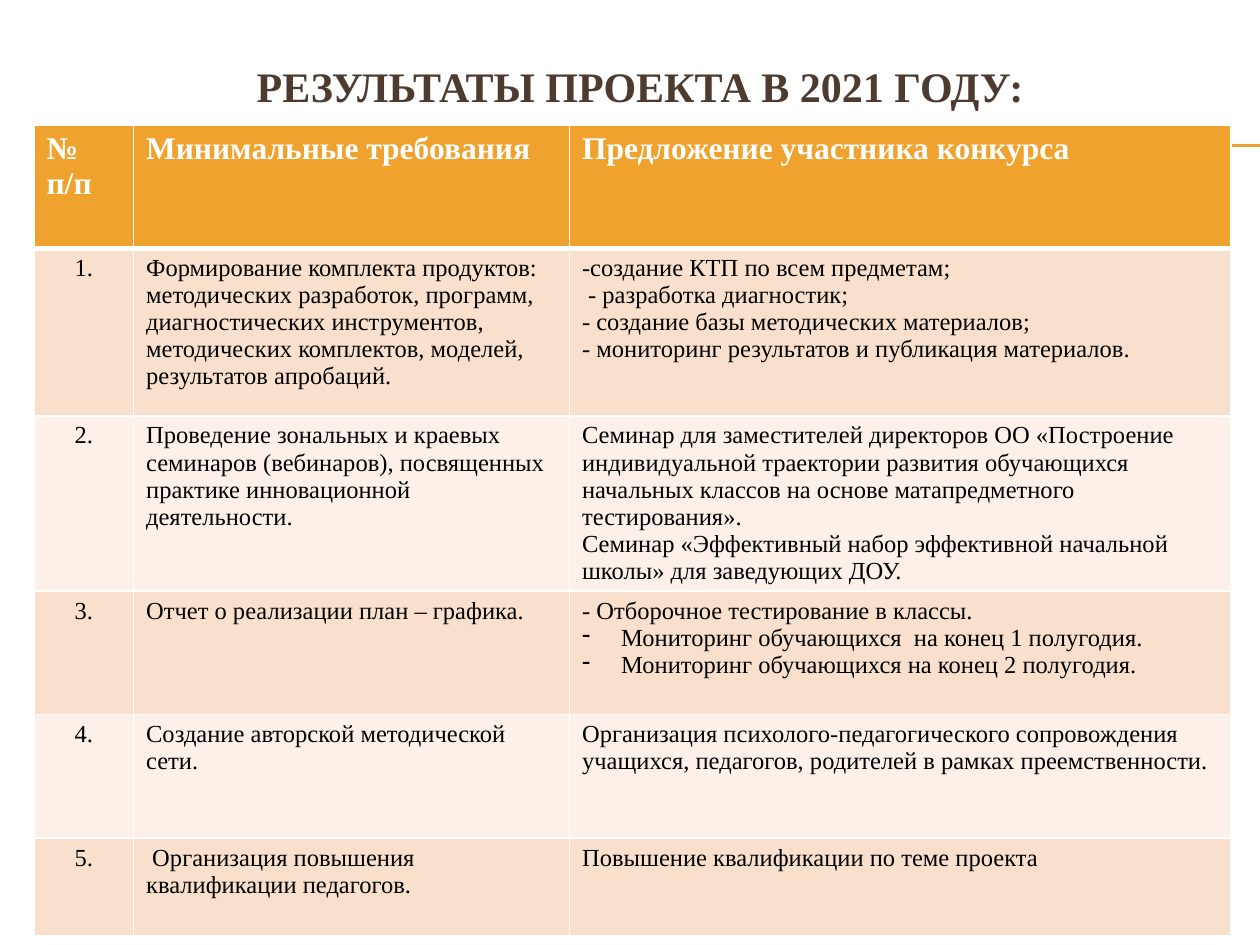
from dataclasses import dataclass

from lxml.etree import SubElement
from pptx import Presentation
from pptx.dml.color import RGBColor
from pptx.enum.shapes import MSO_CONNECTOR
from pptx.enum.text import MSO_ANCHOR, PP_ALIGN
from pptx.oxml import parse_xml
from pptx.oxml.ns import qn
from pptx.util import Inches, Pt

NS = "http://schemas.openxmlformats.org/drawingml/2006/main"


@dataclass(frozen=True)
class Theme:
    font: str = "Times New Roman"
    title: str = "4E3B30"
    accent: str = "F0A22E"
    bands: tuple[str, str] = ("F9E0CD", "FCF0E8")
    white: str = "FFFFFF"
    black: str = "000000"
    big: int = 24
    head: int = 18
    body: int = 14


@dataclass(frozen=True)
class Row:
    high: float
    need: str
    offer: tuple[str, ...]
    dashed: int = 0  # how many closing lines of the offer carry a dash bullet


THEME = Theme()
WIDE, HIGH = 10, 7.5
COLS = (0.79, 3.46, 5.25)
HEADS = ("№ п/п", "Минимальные требования", "Предложение участника конкурса")
HEAD_HIGH = 0.98
ROWS = (
    Row(1.33,
        "Формирование комплекта продуктов: методических разработок, программ, "
        "диагностических инструментов, методических комплектов, моделей, "
        "результатов апробаций.",
        ("-создание КТП по всем предметам;",
         " - разработка диагностик;",
         "- создание базы методических материалов;",
         "- мониторинг результатов и публикация материалов.")),
    Row(1.33,
        "Проведение зональных и краевых  семинаров (вебинаров), посвященных "
        "практике инновационной деятельности.",
        ("Семинар для заместителей директоров ОО «Построение индивидуальной "
         "траектории развития обучающихся  начальных классов на основе "
         "матапредметного тестирования».",
         "Семинар «Эффективный набор эффективной начальной школы» "
         "для заведующих ДОУ.")),
    Row(0.98,
        "Отчет о реализации план – графика.",
        ("- Отборочное тестирование в классы.",
         "Мониторинг обучающихся  на конец 1 полугодия.",
         "Мониторинг обучающихся на конец 2 полугодия."), dashed=2),
    Row(0.98,
        "Создание авторской методической сети.",
        ("Организация психолого-педагогического сопровождения  учащихся, "
         "педагогов, родителей в рамках преемственности.",)),
    Row(0.78,
        " Организация повышения квалификации педагогов.",
        ("Повышение квалификации по теме проекта",)),
)


def write(frame, *lines: str, size: int, color: str, bold: bool = False,
          align=PP_ALIGN.LEFT, dashed: int = 0) -> None:
    for i, line in enumerate(lines):
        para = frame.paragraphs[0] if i == 0 else frame.add_paragraph()
        para.alignment = align
        run = para.add_run()
        run.text = line
        font = run.font
        font.name, font.size, font.bold = THEME.font, Pt(size), bold
        font.color.rgb = RGBColor.from_string(color)
        if i >= len(lines) - dashed:
            dash(para)


def dash(para) -> None:
    props = para._p.get_or_add_pPr()
    props.set("marL", str(Inches(0.31)))
    props.set("indent", str(-Inches(0.31)))
    SubElement(props, qn("a:buChar"), char="-")


def paint(cell, fill: str, top: int = 1, bottom: int = 1) -> None:
    """Fill a cell and rule its four sides in white."""
    cell.fill.solid()
    cell.fill.fore_color.rgb = RGBColor.from_string(fill)
    props = cell._tc.get_or_add_tcPr()
    sides = {"L": 1, "R": 1, "T": top, "B": bottom}
    for i, (side, width) in enumerate(sides.items()):
        props.insert(i, parse_xml(
            f'<a:ln{side} xmlns:a="{NS}" w="{Pt(width)}"><a:solidFill>'
            f'<a:srgbClr val="{THEME.white}"/></a:solidFill></a:ln{side}>'))


def rule(slide, y: float) -> None:
    line = slide.shapes.add_connector(
        MSO_CONNECTOR.STRAIGHT, Inches(0.56), Inches(y), Inches(WIDE), Inches(y))
    line.line.color.rgb = RGBColor.from_string(THEME.accent)
    line.line.width = Pt(0.75)
    SubElement(line._element.spPr, qn("a:effectLst"))


def head(slide, text: str) -> None:
    title = slide.shapes.title
    title.left, title.top = Inches(0.33), Inches(0.21)
    title.width, title.height = Inches(9.5), Inches(0.94)
    title.text_frame.vertical_anchor = MSO_ANCHOR.MIDDLE
    write(title.text_frame, text, size=THEME.big, color=THEME.title,
          bold=True, align=PP_ALIGN.CENTER)


def grid(slide) -> None:
    highs = (HEAD_HIGH, *(row.high for row in ROWS))
    table = slide.shapes.add_table(
        len(highs), len(COLS), Inches(0.27), Inches(0.99),
        Inches(sum(COLS)), Inches(sum(highs))).table
    for col, wide in zip(table.columns, COLS):
        col.width = Inches(wide)
    for line, high in zip(table.rows, highs):
        line.height = Inches(high)

    for c, text in enumerate(HEADS):
        cell = table.cell(0, c)
        paint(cell, THEME.accent, bottom=3)
        write(cell.text_frame, text, size=THEME.head, color=THEME.white, bold=True)

    look = {"size": THEME.body, "color": THEME.black}
    for r, row in enumerate(ROWS, 1):
        cells = [table.cell(r, c) for c in range(len(COLS))]
        for cell in cells:
            paint(cell, THEME.bands[(r - 1) % 2], top=3 if r == 1 else 1)
        mark, need, offer = (cell.text_frame for cell in cells)
        write(mark, f"{r}.", align=PP_ALIGN.CENTER, **look)
        write(need, row.need, **look)
        write(offer, *row.offer, dashed=row.dashed, **look)


def main() -> None:
    deck = Presentation()
    deck.slide_width, deck.slide_height = Inches(WIDE), Inches(HIGH)
    slide = deck.slides.add_slide(deck.slide_layouts[5])
    for y in (1.15, 1.16):
        rule(slide, y)
    head(slide, "РЕЗУЛЬТАТЫ ПРОЕКТА В 2021 ГОДУ:")
    grid(slide)
    deck.save("out.pptx")


if __name__ == "__main__":
    main()
